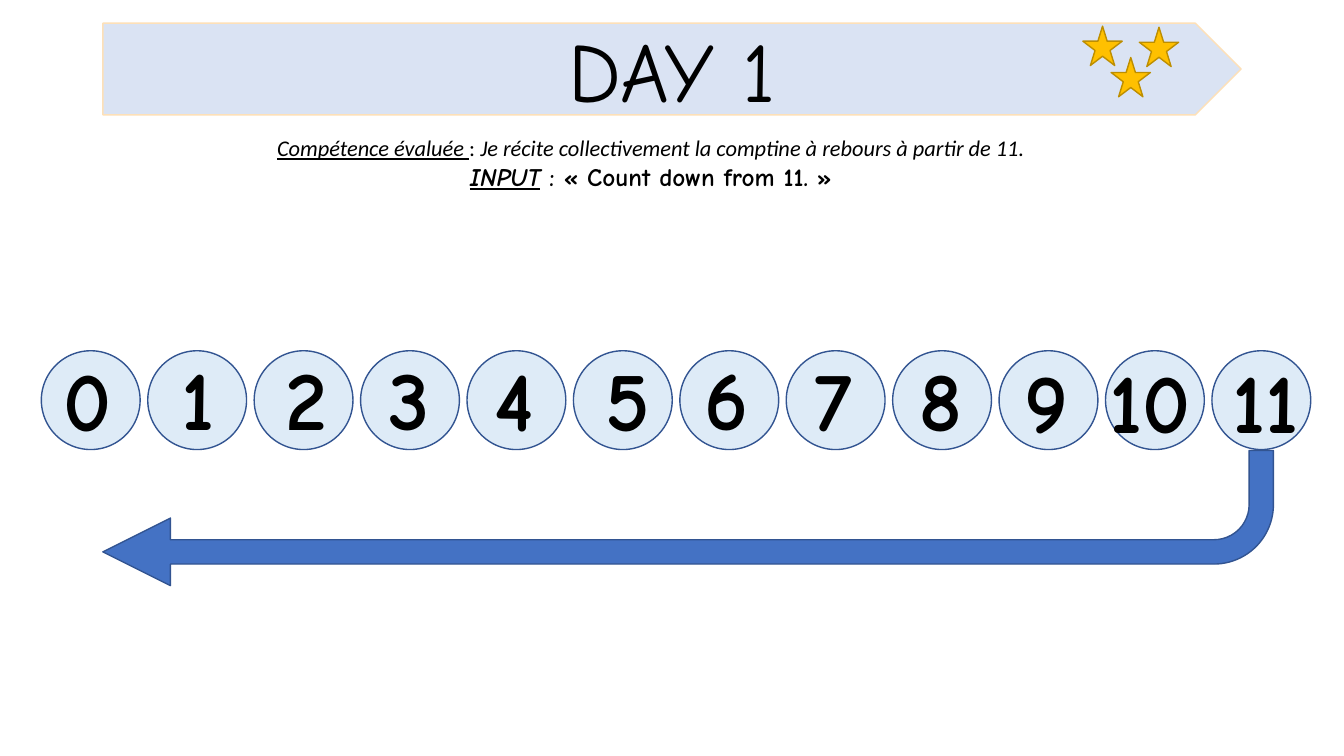
import pptx
import pptx.dml.color
import pptx.enum.shapes
import pptx.enum.text
import pptx.util

Inches = pptx.util.Inches
Kind = pptx.enum.shapes.MSO_SHAPE
HAND = "Comic Neue"
COLOURS = {
    "ink": "000000", "arrow": "4472C4", "navy": "325491", "disc": "DEEBF7",
    "banner": "DAE3F3", "cream": "FDE0B8", "star": "FFC000", "gold": "BD8E00",
}


def tint(name):
    return pptx.dml.color.RGBColor.from_string(COLOURS[name])


class Board:
    """Holds the style and the current slide."""

    def __init__(self, deck):
        self.slide = deck.slides.add_slide(deck.slide_layouts[6])
        self.shapes = self.slide.shapes

    def group(self):
        """Send the next elements into a new group."""
        self.shapes = self.slide.shapes.add_group_shape().shapes

    def ungroup(self):
        self.shapes = self.slide.shapes

    def shape(self, kind, left, top, width, height, fill, line):
        item = self.shapes.add_shape(
            kind, Inches(left), Inches(top), Inches(width), Inches(height))
        item.shadow.inherit = False
        item.fill.solid()
        item.fill.fore_color.rgb = tint(fill)
        item.line.color.rgb = tint(line)
        item.line.width = pptx.util.Pt(1)
        return item

    def text(self, left, top, width, height, lines):
        """Add centred lines, each a list of (text, font, size, marks) runs.

        Marks are letters: b for bold, i for italic, u for underline.
        """
        box = self.shapes.add_textbox(
            Inches(left), Inches(top), Inches(width), Inches(height))
        frame = box.text_frame
        frame.word_wrap = True
        frame.auto_size = pptx.enum.text.MSO_AUTO_SIZE.SHAPE_TO_FIT_TEXT
        for row, runs in enumerate(lines):
            para = frame.add_paragraph() if row else frame.paragraphs[0]
            para.alignment = pptx.enum.text.PP_ALIGN.CENTER
            for words, face, size, marks in runs:
                run = para.add_run()
                run.text = words
                font = run.font
                font.name = face
                font.size = pptx.util.Pt(size)
                font.bold = "b" in marks
                font.italic = "i" in marks
                font.underline = "u" in marks
                font.color.rgb = tint("ink")


def main():
    deck = pptx.Presentation()
    deck.slide_width = Inches(13.33)
    deck.slide_height = Inches(7.5)
    board = Board(deck)

    arrow = board.shape(Kind.BENT_ARROW, 1.02, 4.47, 11.61, 1.34, "arrow", "navy")
    arrow.rotation = 180
    for index, value in enumerate((0.18, 0.25, 0.5, 0.44)):
        arrow.adjustments[index] = value

    # Left and top of each digit box, from 0 to 11
    digits = [
        (0.17, 3.4), (1.27, 3.39), (2.34, 3.39), (3.36, 3.39),
        (4.4, 3.4), (5.53, 3.4), (6.51, 3.39), (7.57, 3.4),
        (8.64, 3.4), (9.68, 3.42), (10.71, 3.42), (11.86, 3.42),
    ]
    pitch = (12.02 - 0.41) / (len(digits) - 1)
    for number in range(len(digits)):
        board.shape(Kind.OVAL, 0.41 + number * pitch, 3.48, 0.98, 0.98, "disc", "navy")
    for number, (left, top) in enumerate(digits):
        board.text(left, top, 1.39, 1.11, [[(str(number), HAND, 60, "b")]])

    board.group()
    board.shape(Kind.PENTAGON, 1.02, 0.23, 11.29, 0.91, "banner", "cream")
    board.text(2.91, 0.13, 7.51, 1.11, [[("DAY 1", HAND, 60, "")]])
    for left, top in ((10.74, 0.26), (11.3, 0.27), (11.02, 0.57)):
        board.shape(Kind.STAR_5_POINT, left, top, 0.39, 0.39, "star", "gold")
    board.ungroup()

    board.text(1.02, 1.28, 10.87, 0.67, [
        [("Compétence évaluée", "Calibri", 16, "iu"),
         (" ", "Calibri", 16, "u"),
         (": ", "Calibri", 16, ""),
         ("Je récite collectivement la comptine à rebours à partir de 11.",
          "Calibri", 16, "i")],
        [("INPUT", HAND, 18, "biu"),
         (" : « Count down from 11. »", HAND, 18, "b")],
    ])
    deck.save("out.pptx")


if __name__ == "__main__":
    main()
